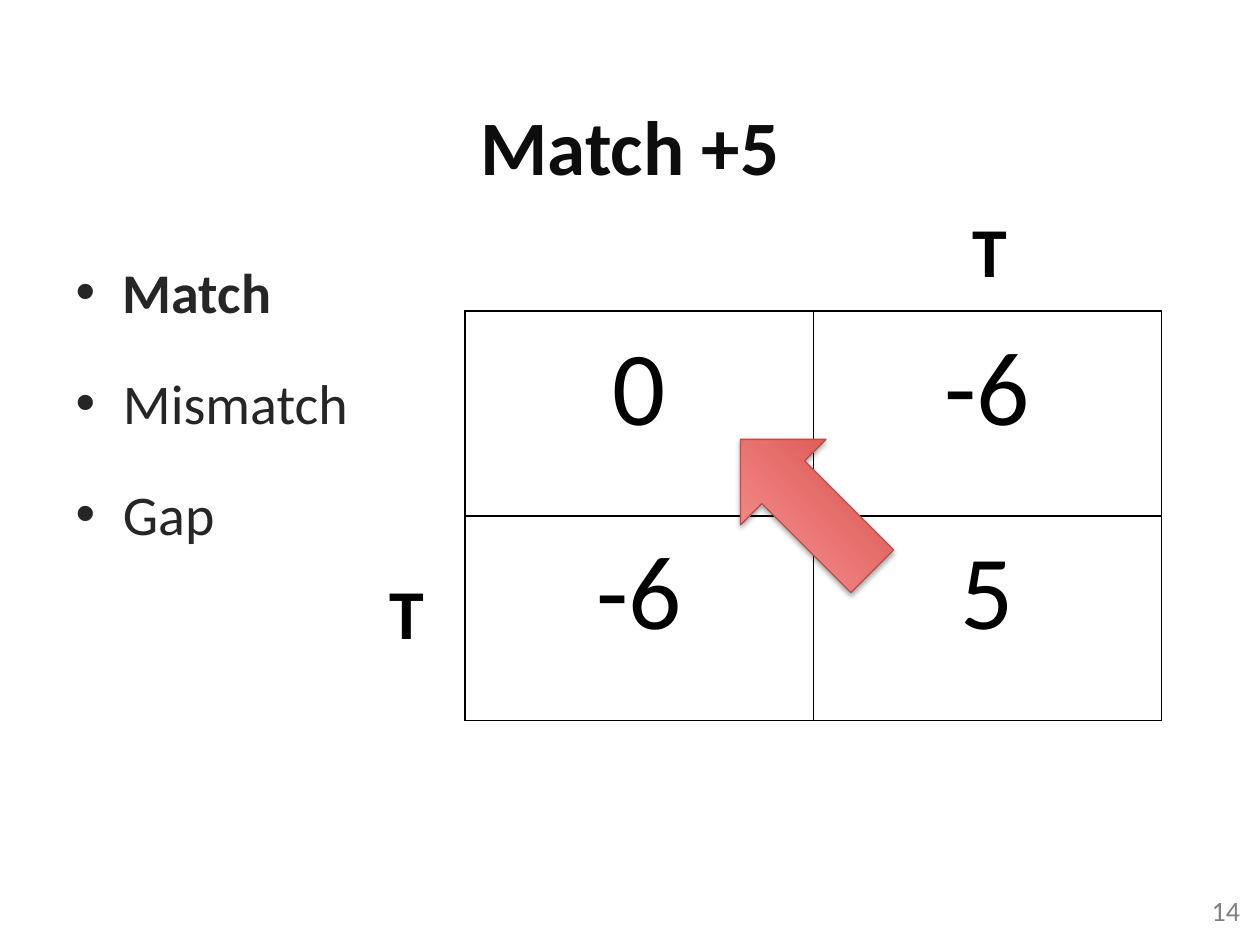
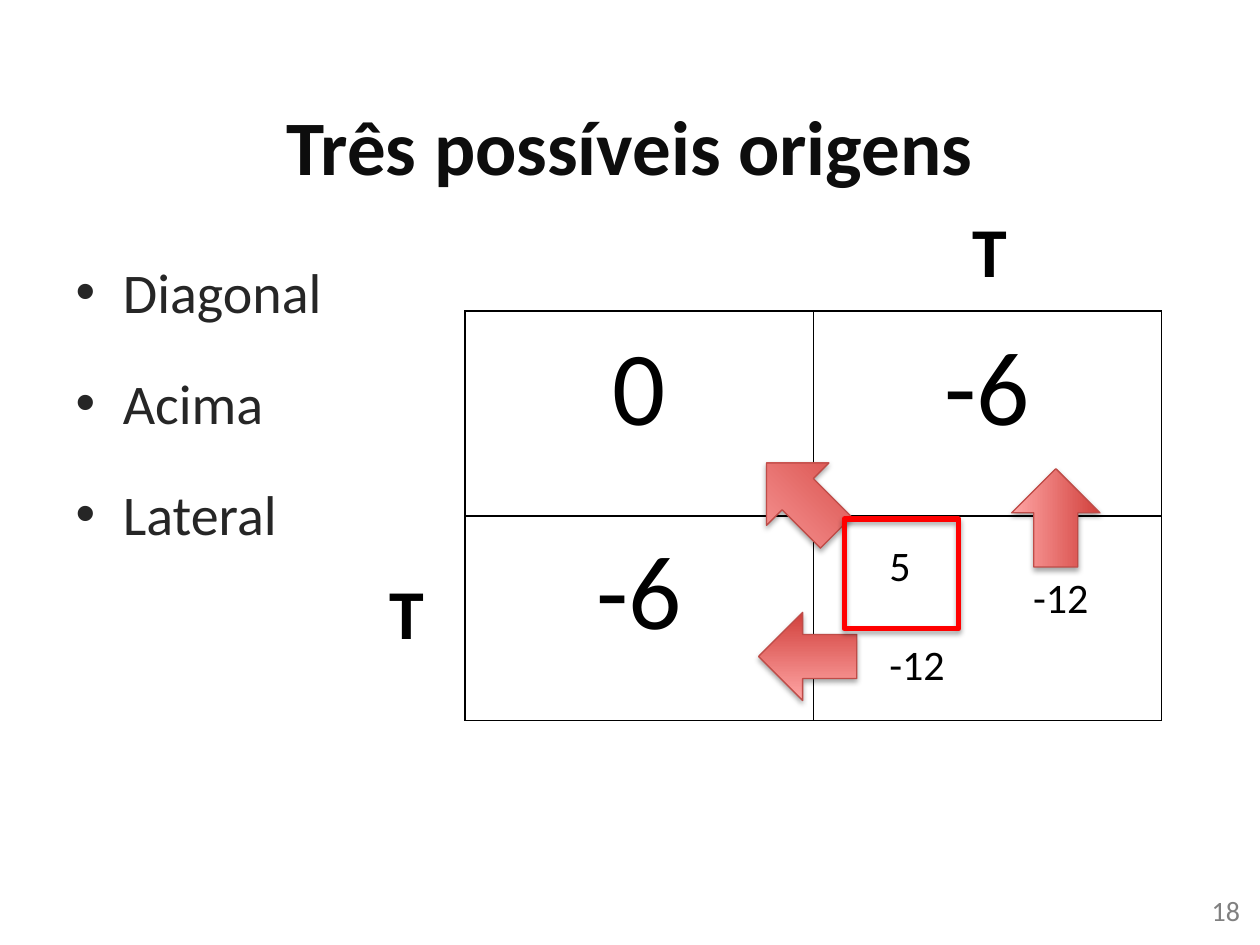
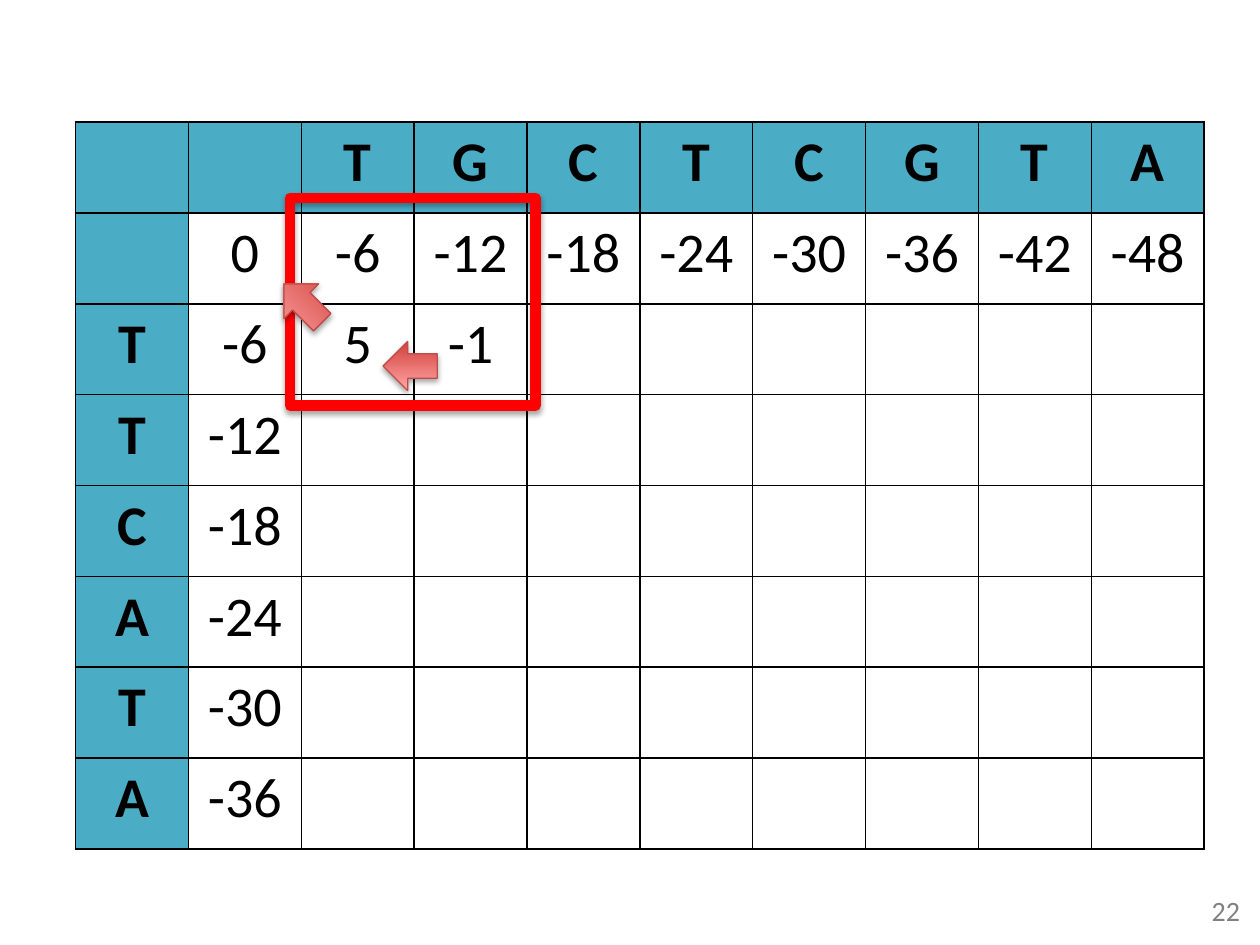
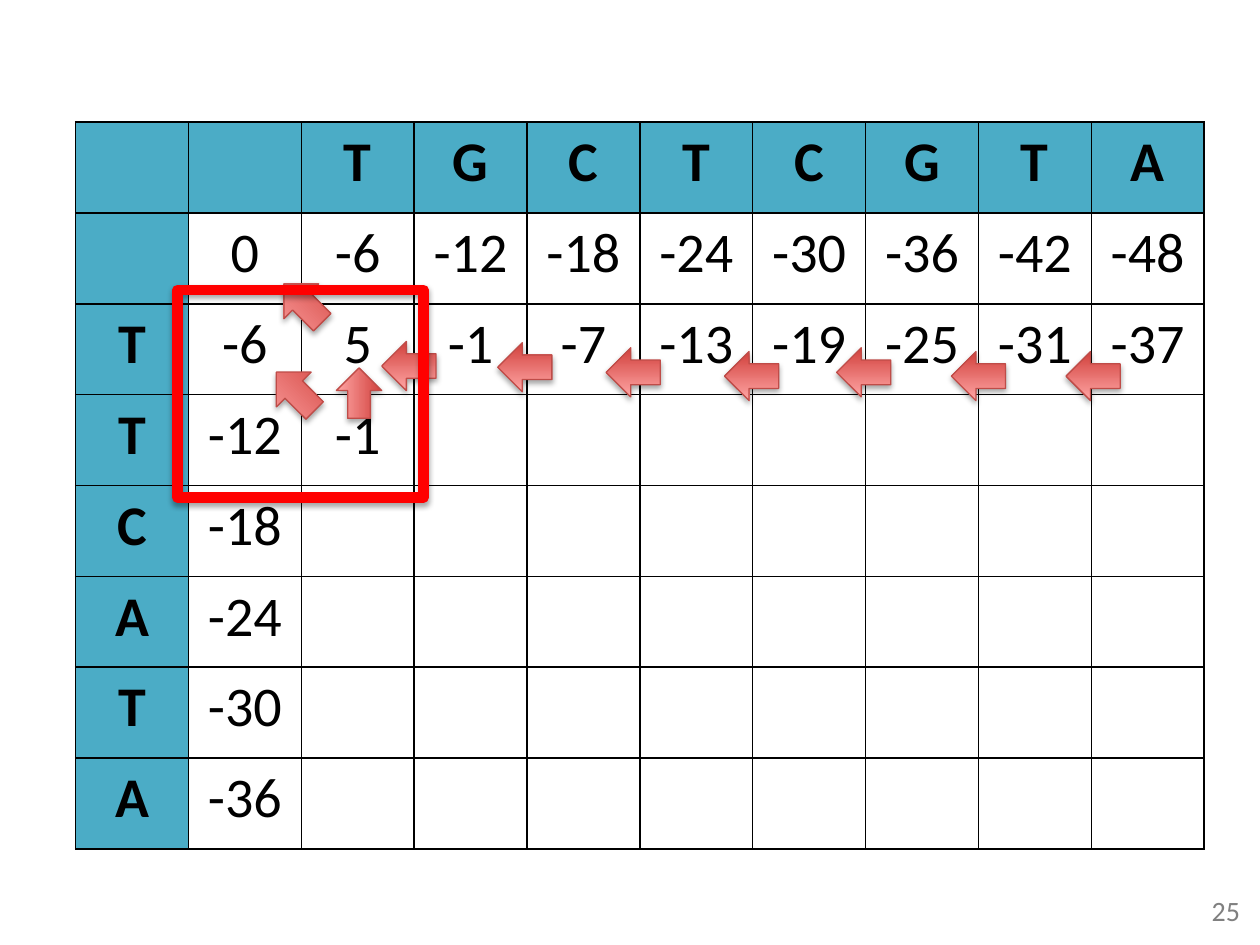
import pptx
import pptx.util
import pptx.dml.color
import pptx.enum.shapes
import pptx.enum.text
import lxml.etree

Inches = pptx.util.Inches
Pt = pptx.util.Pt
ALIGN = pptx.enum.text.PP_ALIGN
SHAPES = pptx.enum.shapes.MSO_SHAPE
DRAWING = "http://schemas.openxmlformats.org/drawingml/2006/main"

# Shared look
BLACK, TITLE, BODY, GREY = "000000", "0D0D0D", "262626", "808080"
RED, HEADER = "FF0000", "4BACC6"
ARROW_DARK, ARROW_LIGHT, ARROW_LINE = "D1403C", "FFA6A5", "BF4C48"
SHADOW = f"""<a:outerShdw xmlns:a="{DRAWING}" blurRad="40000" dist="23000" dir="5400000"
 rotWithShape="0"><a:srgbClr val="{BLACK}"><a:alpha val="35000"/></a:srgbClr></a:outerShdw>"""
BORDER = """<a:{side} xmlns:a="{ns}" w="12700"><a:solidFill><a:srgbClr val="{color}"/>
</a:solidFill></a:{side}>"""
LEFT, DIAGONAL, UP, FRAME = 180, 225, 270, None


def color(value):
    return pptx.dml.color.RGBColor.from_string(value)


def style(paragraph, size, value, bold=False, align=None):
    paragraph.alignment = align
    paragraph.font.name = "Calibri"
    paragraph.font.size = Pt(size)
    paragraph.font.bold = bold
    paragraph.font.color.rgb = color(value)


# Alignment matrix: sequences, gap penalties, then the scores found so far
across, down, gap = "TGCTCGTA", "TTCATA", -6
start = [["", "", *across], ["", *(gap * step for step in range(len(across) + 1))]]
start += [[base, gap * step] for step, base in enumerate(down, 1)]
early_matrix = [list(row) for row in start]
early_matrix[2] += [5, -1]
late_matrix = [list(row) for row in start]
late_matrix[2] += [5 + gap * step for step in range(len(across))]
late_matrix[3] += [-1]

# Content: marks are (left, top, width, height, rotation),
# labels are (left, top, width, height, text, size)
row_arrows = [(3.03, 2.71), (3.95, 2.72), (4.81, 2.76), (5.75, 2.79),
              (6.64, 2.76), (7.55, 2.79), (8.46, 2.79)]
pages = [
    {"number": 14, "title": "Match +5", "bullets": ["Match", "Mismatch", "Gap"],
     "bold": "Match", "grid": [[0, -6], [-6, 5]],
     "marks": [(5.66, 3.53, 1.48, 0.96, DIAGONAL)]},
    {"number": 18, "title": "Três possíveis origens",
     "bullets": ["Diagonal", "Acima", "Lateral"], "grid": [[0, -6], [-6, ""]],
     "marks": [(6.02, 4.86, 0.78, 0.7, LEFT), (5.97, 3.6, 0.78, 0.7, DIAGONAL),
               (7.99, 3.76, 0.78, 0.7, UP), (6.7, 4.12, 0.91, 0.87, FRAME)],
     "labels": [(8.1, 4.49, 0.65, 0.5, "-12", 24), (6.96, 5.02, 0.65, 0.5, "-12", 24),
                (6.96, 4.23, 0.37, 0.5, "5", 24)]},
    {"number": 22, "grid": early_matrix,
     "marks": [(2.3, 1.57, 1.95, 1.65, FRAME), (2.19, 2.21, 0.43, 0.39, DIAGONAL),
               (3.04, 2.71, 0.43, 0.39, LEFT)]},
    {"number": 25, "grid": late_matrix,
     "marks": [(2.19, 2.21, 0.43, 0.39, DIAGONAL),
               *((left, top, 0.43, 0.39, LEFT) for left, top in row_arrows),
               (1.41, 2.3, 1.95, 1.65, FRAME), (2.13, 2.91, 0.43, 0.39, DIAGONAL),
               (2.65, 2.94, 0.4, 0.36, UP)]},
]

deck = pptx.Presentation()
deck.slide_width, deck.slide_height = Inches(10), Inches(7.5)

for content in pages:
    titled = "title" in content
    page = deck.slides.add_slide(deck.slide_layouts[1 if titled else 6])
    labels = content.get("labels", [])

    # Title and list
    if titled:
        labels = labels + [(7.62, 1.6, 0.48, 0.77, "T", 40), (2.99, 4.47, 0.48, 0.77, "T", 40)]
        title, body = page.shapes.title, page.placeholders[1]
        title.left, title.top = Inches(0.5), Inches(0.52)
        title.width, title.height = Inches(9), Inches(1.25)
        title.text_frame.text = content["title"]
        style(title.text_frame.paragraphs[0], 44, TITLE, True, ALIGN.CENTER)
        body.left, body.top = Inches(0.5), Inches(1.99)
        body.width, body.height = Inches(9), Inches(4.95)
        body.text_frame.text = "\n".join(content["bullets"])
        for index, para in enumerate(body.text_frame.paragraphs):
            para.space_before = Pt(25 if index else 0)
            style(para, 32, BODY, para.text == content.get("bold"))

    # Score table
    grid = content["grid"]
    row_count, column_count = len(grid), len(grid[0])
    left, top, width, height = (3.69, 2.47, 5.53, 3.25) if titled else (0.6, 0.97, 8.96, 5.77)
    table = page.shapes.add_table(row_count, column_count, Inches(left), Inches(top),
                                  Inches(width), Inches(height)).table
    table.first_row = table.horz_banding = False
    for row_index, row in enumerate(grid):
        for column_index in range(column_count):
            cell = table.cell(row_index, column_index)
            header = not titled and (row_index == 0 or column_index == 0)
            if titled:
                cell.margin_left = cell.margin_right = Inches(0.23)
                cell.margin_top = cell.margin_bottom = Inches(0.11)
            properties = cell._tc.get_or_add_tcPr()
            for side in ("lnL", "lnR", "lnT", "lnB"):
                properties.append(lxml.etree.fromstring(
                    BORDER.format(side=side, ns=DRAWING, color=BLACK)))
            if header:
                cell.fill.solid()
                cell.fill.fore_color.rgb = color(HEADER)
            else:
                cell.fill.background()
            if column_index < len(row) and row[column_index] != "":
                cell.text = str(row[column_index])
                style(cell.text_frame.paragraphs[0], 60 if titled else 32, BLACK,
                      header, ALIGN.CENTER)

    # Arrows and red frames
    for left, top, width, height, rotation in content["marks"]:
        kind = SHAPES.RECTANGLE if rotation is FRAME else SHAPES.RIGHT_ARROW
        mark = page.shapes.add_shape(kind, Inches(left), Inches(top),
                                     Inches(width), Inches(height))
        mark.shadow.inherit = False
        effects = mark._element.spPr.find(f"{{{DRAWING}}}effectLst")
        effects.append(lxml.etree.fromstring(SHADOW))
        if rotation is FRAME:
            mark.fill.background()
            mark.line.color.rgb = color(RED)
            mark.line.width = Pt(3 if titled else 6)
        else:
            mark.rotation = rotation
            mark.fill.gradient()
            mark.fill.gradient_angle = 90
            for stop, shade in zip(mark.fill.gradient_stops, (ARROW_DARK, ARROW_LIGHT)):
                stop.color.rgb = color(shade)
            mark.line.color.rgb = color(ARROW_LINE)
            mark.line.width = Pt(0.75)

    # Loose labels
    for left, top, width, height, text, size in labels:
        box = page.shapes.add_textbox(Inches(left), Inches(top), Inches(width), Inches(height))
        box.text_frame.word_wrap = False
        box.text_frame.auto_size = pptx.enum.text.MSO_AUTO_SIZE.SHAPE_TO_FIT_TEXT
        box.text_frame.text = text
        style(box.text_frame.paragraphs[0], size, BLACK, text == "T")

    # Page number
    footer = page.shapes.add_textbox(Inches(7.61), Inches(7.04), Inches(2.33), Inches(0.4))
    footer.text_frame.word_wrap = True
    footer.text_frame.text = str(content["number"])
    style(footer.text_frame.paragraphs[0], 16, GREY, align=ALIGN.RIGHT)

deck.save("out.pptx")
